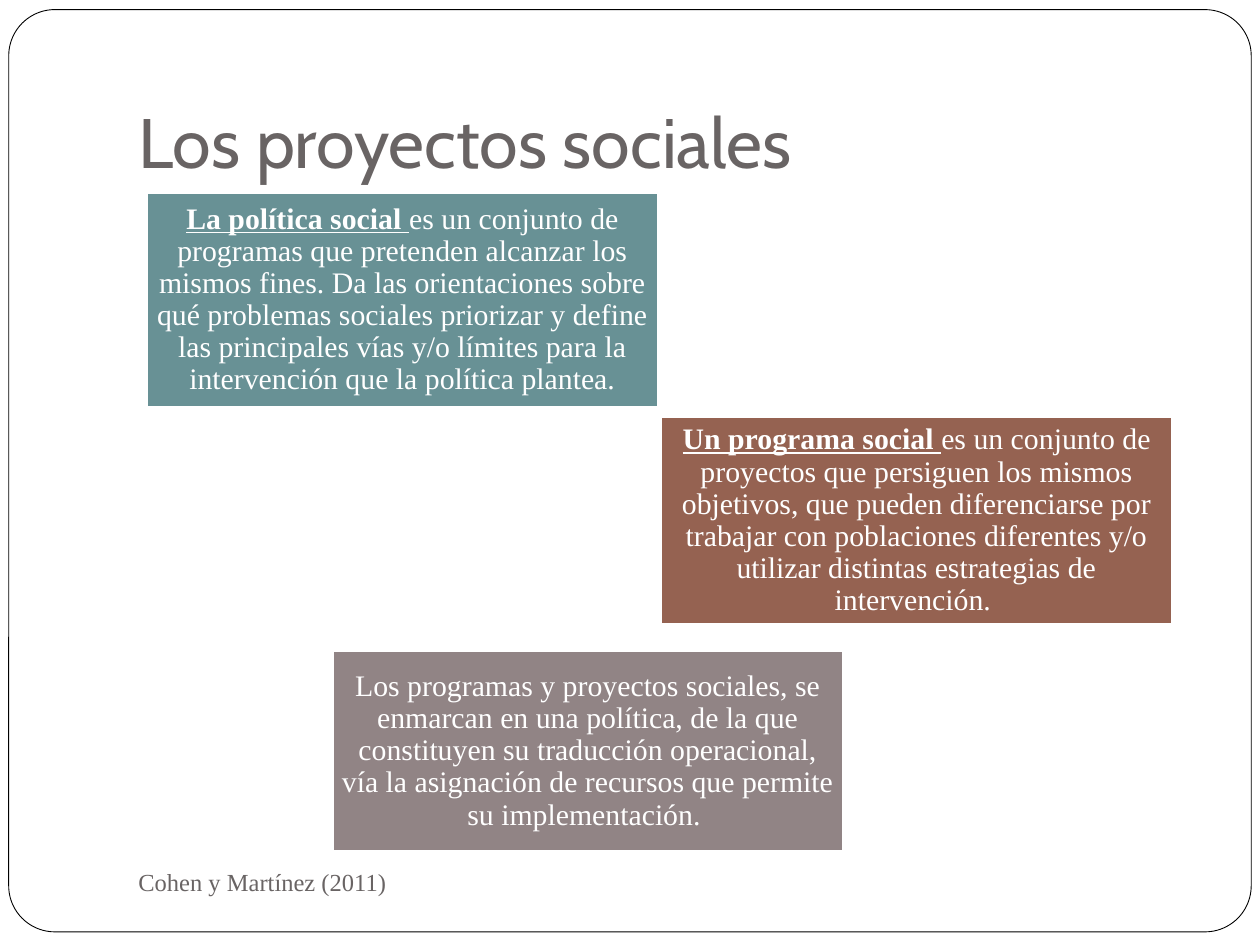
from pptx import Presentation
from pptx.dml.color import RGBColor
from pptx.enum import shapes, text
from pptx.util import Pt

COLORS = {
    "white": "FFFFFF",
    "black": "000000",
    "gray": "696464",
    "teal": "689195",
    "brown": "956251",
    "mauve": "918485",
}
TITLE_FONT, BODY_FONT = "Cabin", "Times New Roman"
CARD_WIDTH = 291.6

# Each card: left, top, height, fill, underlined lead, text
CARDS = [
    (84.2, 110.2, 122.4, "teal", "La política social ",
     "es un conjunto de programas que pretenden alcanzar los mismos fines. "
     "Da las orientaciones sobre qué problemas sociales priorizar y define las "
     "principales vías y/o límites para la intervención que la política plantea."),
    (378, 238.5, 118, "brown", "Un programa social ",
     "es un conjunto de proyectos que persiguen los mismos objetivos, que pueden "
     "diferenciarse por trabajar con poblaciones diferentes y/o utilizar "
     "distintas estrategias de intervención. "),
    (190.1, 372.3, 113.8, "mauve", "",
     "Los programas y proyectos sociales, se enmarcan en una política, de la que "
     "constituyen su traducción operacional, vía la asignación de recursos que "
     "permite su implementación. "),
]


def color(name):
    return RGBColor.from_string(COLORS[name])


def style_font(font, name, size, color_name):
    font.name, font.size = name, Pt(size)
    font.color.rgb = color(color_name)


def set_margins(frame, left, top, right, bottom):
    frame.margin_left, frame.margin_top = Pt(left), Pt(top)
    frame.margin_right, frame.margin_bottom = Pt(right), Pt(bottom)


def add_box(slide, kind, box, fill, line, line_width):
    shape = slide.shapes.add_shape(kind, *map(Pt, box))
    shape.shadow.inherit = False
    shape.fill.solid()
    shape.fill.fore_color.rgb = color(fill)
    shape.line.color.rgb = color(line)
    shape.line.width = Pt(line_width)
    return shape


def add_frame(slide, box):
    frame = add_box(slide, shapes.MSO_SHAPE.ROUNDED_RECTANGLE, box,
                    "white", "black", 0.5)
    frame.adjustments[0] = 0.05
    # Send behind the title placeholder
    slide.shapes.title.element.addprevious(frame.element)


def place_title(slide, box, wording):
    title = slide.shapes.title
    title.left, title.top, title.width, title.height = map(Pt, box)
    frame = title.text_frame
    frame.text = wording
    frame.vertical_anchor = text.MSO_ANCHOR.BOTTOM
    frame.auto_size = text.MSO_AUTO_SIZE.NONE
    set_margins(frame, 7.2, 3.6, 7.2, 7.2)
    paragraph = frame.paragraphs[0]
    paragraph.alignment = text.PP_ALIGN.LEFT
    style_font(paragraph.font, TITLE_FONT, 40, "gray")


def add_card(slide, box, fill, lead, wording):
    card = add_box(slide, shapes.MSO_SHAPE.RECTANGLE, box, fill, "white", 1)
    frame = card.text_frame
    frame.word_wrap = True
    frame.vertical_anchor = text.MSO_ANCHOR.MIDDLE
    set_margins(frame, 5, 5, 5, 5)
    paragraph = frame.paragraphs[0]
    paragraph.alignment = text.PP_ALIGN.CENTER
    paragraph.line_spacing = 0.9
    style_font(paragraph.font, BODY_FONT, 17, "white")
    if lead:
        run = paragraph.add_run()
        run.text = lead
        run.font.bold = run.font.underline = True
        style_font(run.font, BODY_FONT, 17, "white")
    run = paragraph.add_run()
    run.text = wording
    style_font(run.font, BODY_FONT, 17, "white")


def add_citation(slide, box, wording):
    frame = slide.shapes.add_textbox(*map(Pt, box)).text_frame
    frame.word_wrap = True
    frame.vertical_anchor = text.MSO_ANCHOR.MIDDLE
    frame.text = wording
    style_font(frame.paragraphs[0].font, BODY_FONT, 14, "gray")


def main():
    presentation = Presentation()
    presentation.slide_width, presentation.slide_height = Pt(720), Pt(540)
    slide = presentation.slides.add_slide(presentation.slide_layouts[5])

    # Border and title
    add_frame(slide, (5, 5.5, 710, 527))
    place_title(slide, (72, 21.6, 612, 90), "Los proyectos sociales")

    # Definitions
    for left, top, height, fill, lead, wording in CARDS:
        add_card(slide, (left, top, CARD_WIDTH, height), fill, lead, wording)

    # Source
    add_citation(slide, (72, 486, 158, 36), "Cohen y Martínez (2011)")
    presentation.save("out.pptx")


if __name__ == "__main__":
    main()
